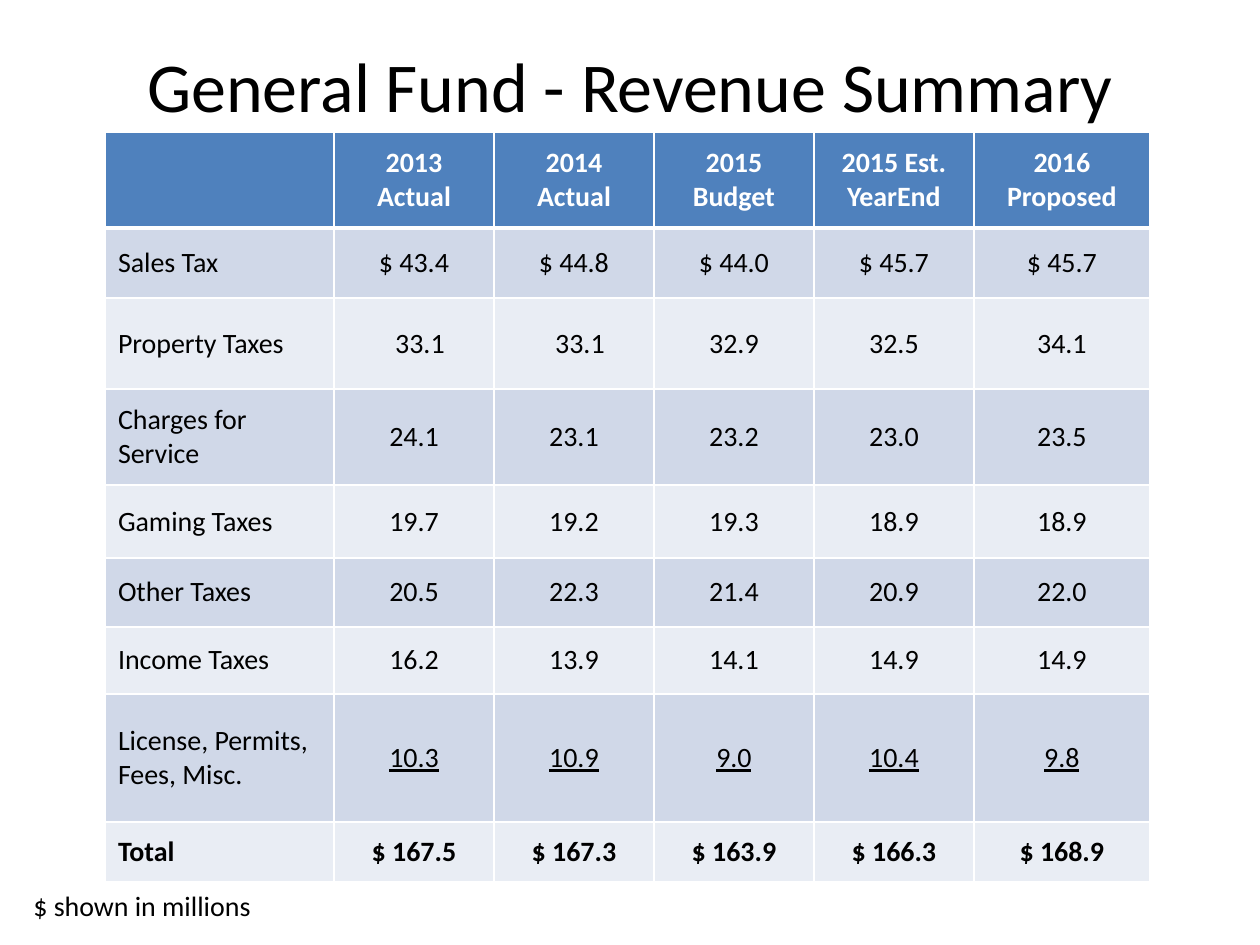
from lxml.etree import SubElement
from pptx import Presentation
from pptx.dml.color import RGBColor
from pptx.enum.text import MSO_ANCHOR as Anchor, PP_ALIGN as Align
from pptx.oxml.ns import qn
from pptx.util import Emu, Pt

PX_PER_INCH = 126
COLORS = {"header": "4F81BD", "odd": "D0D8E8", "even": "E9EDF4",
          "text": "000000", "white": "FFFFFF"}
COLUMN_WIDTHS = [229, 160, 160, 160, 160, 176]
ROW_HEIGHTS = [96, 70, 91, 96, 73, 69, 67, 128, 60]
CELL_INSET = 13
AMOUNT_SHIFT = 12
SHIFTED_AMOUNTS = {(2, 1), (2, 2)}
REVENUES = [
    ["", "2013 Actual", "2014 Actual", "2015 Budget", "2015 Est. YearEnd", "2016 Proposed"],
    ["Sales Tax", "$ 43.4", "$ 44.8", "$ 44.0", "$ 45.7", "$ 45.7"],
    ["Property Taxes", "33.1", "33.1", "32.9", "32.5", "34.1"],
    ["Charges for Service", "24.1", "23.1", "23.2", "23.0", "23.5"],
    ["Gaming Taxes", "19.7", "19.2", "19.3", "18.9", "18.9"],
    ["Other Taxes", "20.5", "22.3", "21.4", "20.9", "22.0"],
    ["Income Taxes", "16.2", "13.9", "14.1", "14.9", "14.9"],
    ["License, Permits, Fees, Misc.", "10.3", "10.9", "9.0", "10.4", "9.8"],
    ["Total", "$ 167.5", "$ 167.3", "$ 163.9", "$ 166.3", "$ 168.9"],
]


def px(length):
    """Turn px into EMU."""
    return Emu(round(length * 914400 / PX_PER_INCH))


def write(frame, text, size, color="text", align=Align.LEFT, **formats):
    """Write one formatted paragraph into a text frame."""
    paragraph = frame.paragraphs[0]
    paragraph.alignment = align
    run = paragraph.add_run()
    run.text = text
    run.font.color.rgb = RGBColor.from_string(COLORS[color])
    for name, value in {"name": "Calibri", "size": Pt(size), **formats}.items():
        setattr(run.font, name, value)


def add_label(slide, box, text, size, align=Align.LEFT, anchor=Anchor.TOP):
    """Place a line of text in the given box."""
    frame = slide.shapes.add_textbox(*map(px, box)).text_frame
    frame.word_wrap = True
    frame.vertical_anchor = anchor
    write(frame, text, size, align=align)


def add_borders(cell, widths):
    """Draw white cell borders with the given widths in points."""
    properties = cell._tc.get_or_add_tcPr()
    for side, width in widths.items():
        line = SubElement(properties, qn(f"a:ln{side}"), w=str(Pt(width)))
        fill = SubElement(line, qn("a:solidFill"))
        SubElement(fill, qn("a:srgbClr"), val=COLORS["white"])


def format_cell(cell, row, column, text):
    """Fill, border and write one cell of the revenue table."""
    header, total = row == 0, row == len(REVENUES) - 1
    add_borders(cell, {"L": 1, "R": 1, "T": 3 if row == 1 else 1, "B": 3 if header else 1})
    cell.fill.solid()
    band = "header" if header else "odd" if row % 2 else "even"
    cell.fill.fore_color.rgb = RGBColor.from_string(COLORS[band])
    shift = AMOUNT_SHIFT if (row, column) in SHIFTED_AMOUNTS else 0
    layout = {"vertical_anchor": Anchor.MIDDLE, "margin_left": px(CELL_INSET + shift),
              "margin_right": px(CELL_INSET)}
    for name, value in layout.items():
        setattr(cell, name, value)
    if text:
        write(cell.text_frame, text, 16, "white" if header else "text",
              Align.CENTER if column else Align.LEFT, bold=header or total,
              underline=column > 0 and row == len(REVENUES) - 2)


def add_revenue_table(slide, left, top):
    """Place the revenue table with its corner at the given point."""
    box = map(px, (left, top, sum(COLUMN_WIDTHS), sum(ROW_HEIGHTS)))
    table = slide.shapes.add_table(len(ROW_HEIGHTS), len(COLUMN_WIDTHS), *box).table
    for column, width in zip(table.columns, COLUMN_WIDTHS):
        column.width = px(width)
    for row, height in zip(table.rows, ROW_HEIGHTS):
        row.height = px(height)
    for row, texts in enumerate(REVENUES):
        for column, text in enumerate(texts):
            format_cell(table.cell(row, column), row, column, text)


def main():
    """Build the revenue summary slide."""
    deck = Presentation()
    deck.slide_width, deck.slide_height = px(1260), px(945)
    slide = deck.slides.add_slide(deck.slide_layouts[6])
    add_label(slide, (105, 32, 1050, 105), "General Fund - Revenue Summary", 40,
              Align.CENTER, Anchor.MIDDLE)
    add_revenue_table(slide, 105, 132)
    add_label(slide, (21, 882, 325, 47), "$ shown in millions", 16)
    deck.save("out.pptx")


if __name__ == "__main__":
    main()
